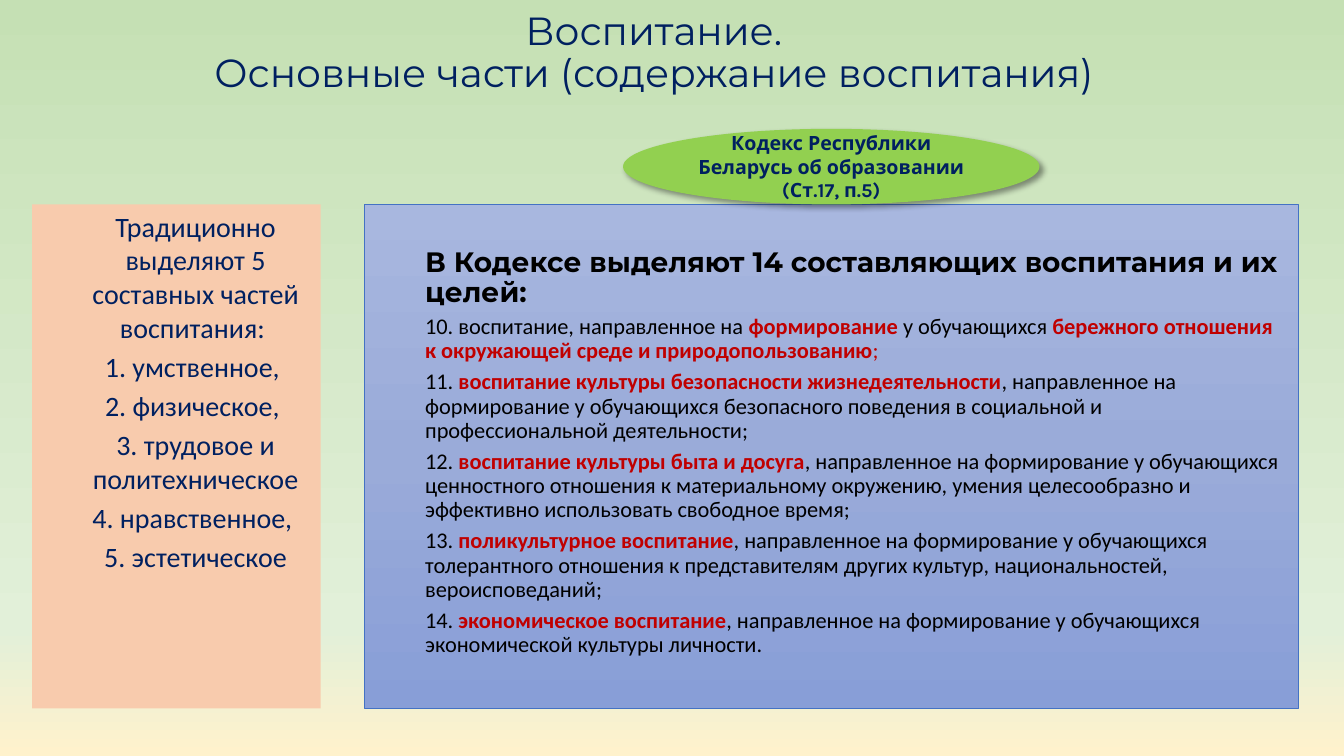
from lxml.etree import SubElement
from pptx import Presentation
from pptx.dml.color import RGBColor
from pptx.enum.shapes import MSO_SHAPE
from pptx.enum.text import MSO_ANCHOR, PP_ALIGN
from pptx.oxml.ns import qn
from pptx.util import Pt

NAVY, BLACK, RED = "002060", "000000", "C00000"
PLAIN, KEY, TAIL = (BLACK, False), (RED, True), (RED, False)

TITLE = "Воспитание.\nОсновные части (содержание воспитания)"
CODE = "Кодекс Республики Беларусь об образовании (Ст.17, п.5)"
PARTS = [
    "Традиционно выделяют 5 составных частей воспитания: ",
    "1. умственное, ",
    "2. физическое, ",
    "3. трудовое и политехническое",
    "4. нравственное, ",
    "5. эстетическое",
]
HEADING = "В Кодексе выделяют 14 составляющих воспитания и их целей:"
GOALS = [
    [("10. воспитание, направленное на ", PLAIN),
     ("формирование ", KEY),
     ("у обучающихся ", PLAIN),
     ("бережного отношения к окружающей среде и природопользованию", KEY),
     (";", TAIL)],
    [("11. ", PLAIN),
     ("воспитание культуры безопасности жизнедеятельности", KEY),
     (", направленное на формирование у обучающихся безопасного поведения "
      "в социальной и профессиональной деятельности;", PLAIN)],
    [("12. ", PLAIN),
     ("воспитание культуры быта и досуга", KEY),
     (", направленное на формирование у обучающихся ценностного отношения "
      "к материальному окружению, умения целесообразно "
      "и эффективно использовать свободное время;", PLAIN)],
    [("13. ", PLAIN),
     ("поликультурное воспитание", KEY),
     (", направленное на формирование у обучающихся толерантного отношения "
      "к представителям других культур, национальностей, вероисповеданий;", PLAIN)],
    [("14. ", PLAIN),
     ("экономическое воспитание", KEY),
     (", направленное на формирование у обучающихся "
      "экономической культуры личности.", PLAIN)],
]


def color(value):
    return RGBColor.from_string(value)


def set_font(font, name, size, value, bold=False):
    font.name, font.size, font.bold = name, Pt(size), bold
    font.color.rgb = color(value)


def set_gradient(fill, owner, stops):
    """Fill from top to bottom through (percent, colour) stops."""
    fill.gradient()
    fill.gradient_angle = 270
    stop_list = next(owner.iter(qn("a:gsLst")))
    for old_stop in list(stop_list):
        stop_list.remove(old_stop)
    for percent, value in stops:
        stop = SubElement(stop_list, qn("a:gs"), pos=str(percent * 1000))
        SubElement(stop, qn("a:srgbClr"), val=value)


def add_panel(page, kind, box):
    panel = page.shapes.add_shape(kind, *map(Pt, box))
    panel.shadow.inherit = False
    panel.line.fill.background()
    panel.text_frame.word_wrap = True
    return panel


def set_insets(frame, left, top):
    frame.margin_left, frame.margin_top = Pt(left), Pt(top)
    frame.vertical_anchor = MSO_ANCHOR.TOP


def add_para(frame, index, align, space):
    para = frame.add_paragraph() if index else frame.paragraphs[0]
    para.alignment, para.space_before = align, Pt(space)
    return para


def add_title(page, box):
    frame = page.shapes.add_textbox(*map(Pt, box)).text_frame
    frame.word_wrap = True
    frame.vertical_anchor = MSO_ANCHOR.MIDDLE
    para = add_para(frame, 0, PP_ALIGN.CENTER, 0)
    para.text, para.line_spacing = TITLE, 0.9
    set_font(para.font, "Montserrat", 28, NAVY)


def add_goals(page, box):
    panel = add_panel(page, MSO_SHAPE.RECTANGLE, box)
    set_gradient(panel.fill, panel._element,
                 [(0, "A8B7DF"), (50, "9AABD9"), (100, "889ED7")])
    panel.line.color.rgb, panel.line.width = color("4472C4"), Pt(0.5)
    frame = panel.text_frame
    set_insets(frame, 43.2, 31)
    # Heading, then the numbered goals
    heading = add_para(frame, 0, PP_ALIGN.LEFT, 0)
    heading.text, heading.line_spacing = HEADING, 0.9
    set_font(heading.font, "Montserrat", 20, BLACK, True)
    for index, goal in enumerate(GOALS, 1):
        para = add_para(frame, index, PP_ALIGN.LEFT, 5)
        para.line_spacing = 0.9
        for text, (value, bold) in goal:
            span = para.add_run()
            span.text = text
            set_font(span.font, "Calibri", 16, value, bold)


def add_code_badge(page, box):
    badge = add_panel(page, MSO_SHAPE.OVAL, box)
    badge.fill.solid()
    badge.fill.fore_color.rgb = color("92D050")
    # Soft shadow to the lower right
    effects = next(badge._element.iter(qn("a:effectLst")))
    shadow = SubElement(effects, qn("a:outerShdw"), blurRad=str(Pt(4)),
                        dist=str(Pt(3)), dir="2700000", algn="tl", rotWithShape="0")
    tint = SubElement(shadow, qn("a:srgbClr"), val=BLACK)
    SubElement(tint, qn("a:alpha"), val="40000")
    badge.text_frame.vertical_anchor = MSO_ANCHOR.MIDDLE
    para = add_para(badge.text_frame, 0, PP_ALIGN.CENTER, 0)
    para.text = CODE
    set_font(para.font, "Karla", 14, NAVY, True)


def add_parts(page, box):
    panel = add_panel(page, MSO_SHAPE.RECTANGLE, box)
    panel.fill.solid()
    panel.fill.fore_color.rgb = color("F8CBAD")
    set_insets(panel.text_frame, 34.5, 3.6)
    for index, text in enumerate(PARTS):
        para = add_para(panel.text_frame, index, PP_ALIGN.CENTER, 4)
        para.text = text
        set_font(para.font, "Calibri", 20, NAVY)


def main():
    deck = Presentation()
    deck.slide_width, deck.slide_height = Pt(960), Pt(540)
    page = deck.slides.add_slide(deck.slide_layouts[6])
    set_gradient(page.background.fill, page._element,
                 [(0, "C5E0B4"), (83, "E2F0D9"), (100, "FFF2CC")])
    add_title(page, (6.5, 13.7, 921, 49))
    add_goals(page, (260.5, 146, 667, 360))
    add_code_badge(page, (445, 92, 297.5, 54))
    add_parts(page, (23, 146, 206, 360))
    deck.save("out.pptx")


if __name__ == "__main__":
    main()
